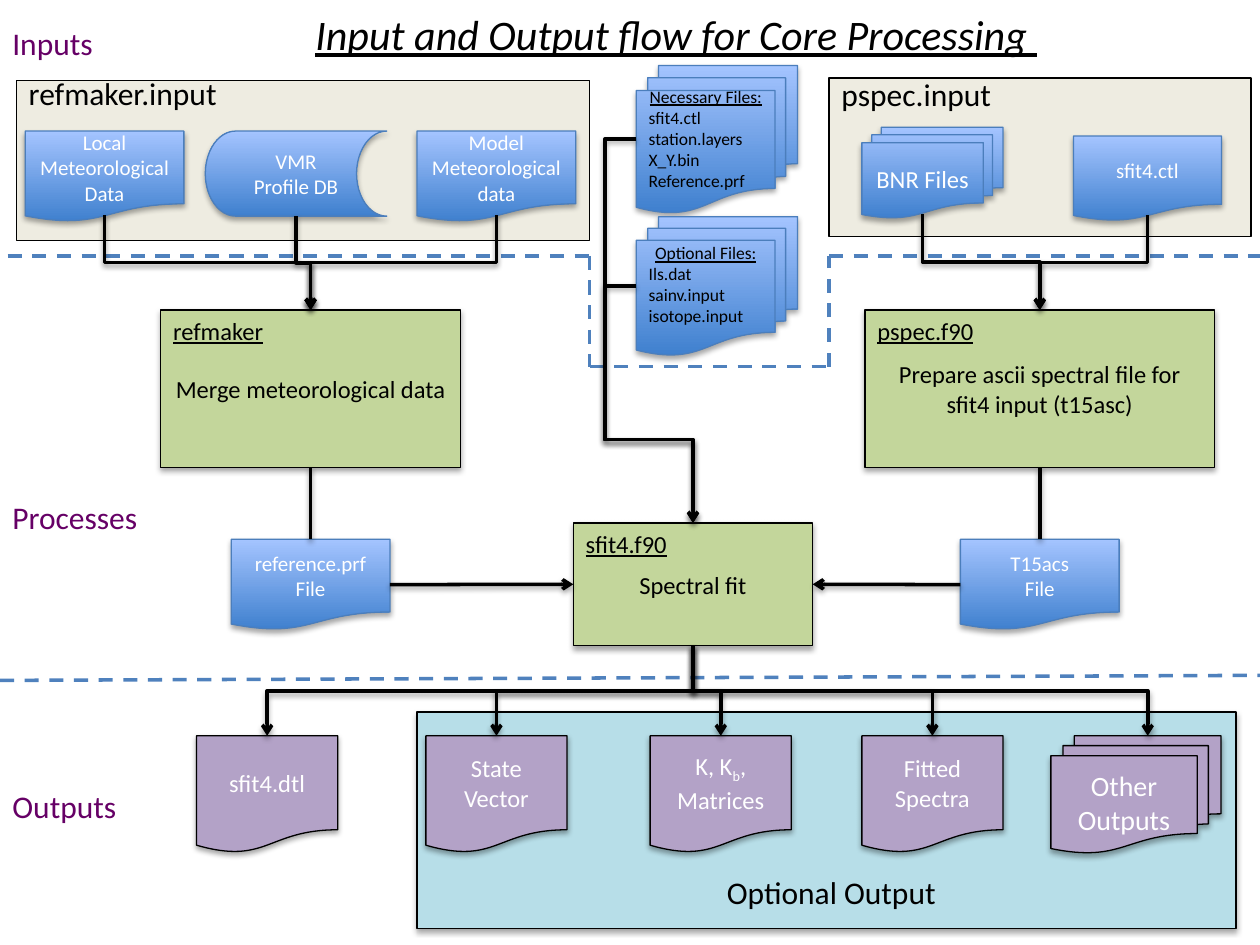
from lxml.etree import SubElement
from pptx import Presentation
from pptx.dml.color import RGBColor
from pptx.enum.dml import MSO_LINE
from pptx.enum.shapes import MSO_CONNECTOR, MSO_SHAPE
from pptx.enum.text import MSO_ANCHOR, PP_ALIGN
from pptx.oxml.ns import qn
from pptx.util import Inches, Pt

BLACK = RGBColor(0x00, 0x00, 0x00)
WHITE = RGBColor(0xFF, 0xFF, 0xFF)
PURPLE = RGBColor(0x66, 0x00, 0x66)
LILAC = RGBColor(0xB3, 0xA2, 0xC7)
GREEN = RGBColor(0xC3, 0xD6, 0x9B)
CREAM = RGBColor(0xEE, 0xEC, 0xE1)
AQUA = RGBColor(0xB7, 0xDE, 0xE8)
DASH_BLUE = RGBColor(0x4F, 0x81, 0xBD)
EDGE_BLUE = RGBColor(0x4B, 0x7E, 0xBC)
GRADIENT = RGBColor(0x3F, 0x80, 0xCE), RGBColor(0xA4, 0xC4, 0xFF)

COLS, ROWS = 100, 75
UNIT = Inches(10) / COLS
DOC, MULTI = MSO_SHAPE.FLOWCHART_DOCUMENT, MSO_SHAPE.FLOWCHART_MULTIDOCUMENT
STORAGE, PROCESS = MSO_SHAPE.FLOWCHART_STORED_DATA, MSO_SHAPE.FLOWCHART_PROCESS


def grid(*cells):
    return [round(cell * UNIT) for cell in cells]


def inside(box, dx, dy, w, h):
    return box[0] + dx, box[1] + dy, w, h


def at(box, fx, fy):
    x, y, w, h = box
    return x + fx * w, y + fy * h


def add_run(p, text, size, color, underline=False, italic=False, baseline=0):
    r = p.add_run()
    r.text = text
    r.font.name, r.font.size, r.font.color.rgb = "Calibri", Pt(size), color
    r.font.underline, r.font.italic = underline, italic
    if baseline:
        r.font._element.set("baseline", str(baseline))


def next_paragraph(tf, i):
    return tf.add_paragraph() if i else tf.paragraphs[0]


def add_label(s, box, text, size=18, color=BLACK, underline=False):
    tf = s.shapes.add_textbox(*grid(*box)).text_frame
    tf.word_wrap = True
    add_run(tf.paragraphs[0], text, size, color, underline)


def add_shadow(sp, alpha, dist):
    props = sp._element.spPr
    effects = props.find(qn("a:effectLst"))
    if effects is None:
        effects = SubElement(props, qn("a:effectLst"))
    shadow = SubElement(effects, qn("a:outerShdw"), blurRad="40000", dist=str(dist),
                        dir="5400000", rotWithShape="0")
    color = SubElement(shadow, qn("a:srgbClr"), val="000000")
    SubElement(color, qn("a:alpha"), val=str(alpha * 1000))


def add_block(s, kind, box, fill, lines=(), size=12, color=WHITE, edge=0.75, shadow=True):
    sp = s.shapes.add_shape(kind, *grid(*box))
    sp.shadow.inherit = False
    if fill is GRADIENT:
        sp.fill.gradient()
        sp.fill.gradient_angle = 90
        for i, stop in enumerate(sp.fill.gradient_stops):
            stop.color.rgb, stop.position = GRADIENT[i], i
    else:
        sp.fill.solid()
        sp.fill.fore_color.rgb = fill
    sp.line.color.rgb = EDGE_BLUE if fill is GRADIENT else BLACK
    sp.line.width = Pt(edge)
    if shadow:
        add_shadow(sp, 35, 23000)
    tf = sp.text_frame
    tf.word_wrap, tf.vertical_anchor = True, MSO_ANCHOR.MIDDLE
    for i, line in enumerate(lines):
        p = next_paragraph(tf, i)
        p.alignment = PP_ALIGN.CENTER
        for text, baseline in [(line, 0)] if isinstance(line, str) else line:
            add_run(p, text, size, color, baseline=baseline)
    return sp


def add_line(s, start, end, kind=MSO_CONNECTOR.STRAIGHT, color=BLACK):
    cxn = s.shapes.add_connector(kind, *grid(*start, *end))
    cxn.line.color.rgb, cxn.line.width = color, Pt(2)
    return cxn


def add_divider(s, *points):
    for start, end in zip(points, points[1:]):
        cxn = add_line(s, start, end, color=DASH_BLUE)
        cxn.line.dash_style = MSO_LINE.DASH
        SubElement(cxn._element.spPr, qn("a:effectLst"))


def finish_flow(cxn, arrow=True):
    if arrow:
        SubElement(cxn.line._get_or_add_ln(), qn("a:tailEnd"), type="arrow")
    add_shadow(cxn, 38, 20000)


def flow_straight(s, start, end, arrow=True):
    finish_flow(add_line(s, start, end), arrow)


def flow_down(s, start, end):
    (x1, y1), (x2, y2) = start, end
    cx, cy = (x1 + x2) / 2, (y1 + y2) / 2
    half_w, half_h = (y2 - y1) / 2, abs(x2 - x1) / 2
    side = 1 if x2 > x1 else -1
    cxn = add_line(s, (cx + side * half_w, cy - half_h), (cx - side * half_w, cy + half_h),
                   MSO_CONNECTOR.ELBOW)
    cxn._element.spPr.xfrm.set("rot", "16200000" if side > 0 else "5400000")
    finish_flow(cxn)


def flow_around(s, start, end, trunk_x, bend_y):
    cxn = add_line(s, start, end, MSO_CONNECTOR.ELBOW)
    geom = cxn._element.spPr.find(qn("a:prstGeom"))
    geom.set("prst", "bentConnector4")
    shares = ((trunk_x - start[0]) / (end[0] - start[0]),
              (bend_y - start[1]) / (end[1] - start[1]))
    for i, share in enumerate(shares, 1):
        SubElement(geom.find(qn("a:avLst")), qn("a:gd"), name=f"adj{i}",
                   fmla=f"val {round(share * 100000)}")
    finish_flow(cxn)


def add_title(s, box):
    title = s.shapes.title
    title.left, title.top, title.width, title.height = grid(*box)
    p = title.text_frame.paragraphs[0]
    p.alignment = PP_ALIGN.CENTER
    add_run(p, "Input and Output flow for Core Processing ", 24, BLACK, True, True)


def add_process(s, box, name, task, name_width):
    add_block(s, PROCESS, box, GREEN, [task], 14, BLACK)
    add_label(s, inside(box, 0, 0, name_width, 2.7), name, 14, underline=True)
    return box


def add_refmaker_input(s, box):
    add_block(s, MSO_SHAPE.RECTANGLE, box, CREAM, edge=0, shadow=False)
    add_label(s, inside(box, 0, -1, 19.3, 4), "refmaker.input")
    feet = []
    for kind, dx, w, h, foot, text in (
            (DOC, 0.7, 12.6, 7.2, 0.93, "Local Meteorological Data"),
            (STORAGE, 15, 14.4, 6.75, 1, "VMR Profile DB"),
            (DOC, 31.8, 12.6, 7.2, 0.93, "Model Meteorological data")):
        source = inside(box, dx, 4, w, h)
        add_block(s, kind, source, GRADIENT, [text])
        feet.append(at(source, 0.5, foot))
    return feet


def add_pspec_input(s, box):
    add_block(s, MSO_SHAPE.RECTANGLE, box, CREAM, edge=0, shadow=False)
    add_label(s, inside(box, 0, -0.7, 17.8, 4), "pspec.input")
    bnr, ctl = inside(box, 2.6, 3.9, 11.2, 7.2), inside(box, 19.4, 4.6, 11.75, 6.75)
    add_block(s, MULTI, bnr, GRADIENT, ["BNR Files"], 14)
    add_block(s, DOC, ctl, GRADIENT, ["sfit4.ctl"])
    return at(bnr, 0.43, 0.96), at(ctl, 0.5, 0.93)


def add_file_stack(s, box, heading, names):
    tf = add_block(s, MULTI, box, GRADIENT).text_frame
    tf.margin_bottom = Inches(0.22)
    for i, text in enumerate([heading, *names]):
        p = next_paragraph(tf, i)
        p.alignment = PP_ALIGN.LEFT if i else PP_ALIGN.CENTER
        add_run(p, text, 10, BLACK, underline=i == 0)
    return at(box, 0, 0.5)


def add_outputs(s, box):
    add_block(s, MSO_SHAPE.RECTANGLE, box, AQUA)
    heads = []
    matrices = [("K, K", 0), ("b", -25000), (", Matrices", 0)]
    for kind, dx, w, size, head, line in (
            (DOC, -17.5, 11.2, 14, 0.5, "sfit4.dtl"),
            (DOC, 0.7, 11.2, 14, 0.5, "State Vector"),
            (DOC, 18.5, 11.2, 14, 0.5, matrices),
            (DOC, 35.3, 11.2, 14, 0.5, "Fitted Spectra"),
            (MULTI, 50.3, 13.5, 16, 0.57, "Other Outputs")):
        output = inside(box, dx, 1.9, w, 9.3)
        add_block(s, kind, output, LILAC, [line], size)
        heads.append(at(output, head, 0))
    add_label(s, inside(box, 23.6, 12.3, 19.3, 4), "Optional Output")
    return heads


def main():
    prs = Presentation()
    prs.slide_width, prs.slide_height = grid(COLS, ROWS)
    s = prs.slides.add_slide(prs.slide_layouts[5])
    add_title(s, (21.7, 0.2, 63.9, 5))
    for text, y, w in (("Inputs", 1.4, 8.7), ("Processes", 39, 12.7), ("Outputs", 62, 10.5)):
        add_label(s, (0, y, w, 4), text, color=PURPLE)
    add_divider(s, (0.6, 20.3), (46.8, 20.3), (46.8, 29.1), (65.8, 29.1), (65.8, 20.3), (COLS, 20.3))
    add_divider(s, (0, 54), (COLS, 53.6))

    met_feet = add_refmaker_input(s, (1.3, 6.4, 45.5, 12.7))
    spectra_feet = add_pspec_input(s, (65.8, 6.2, 33.5, 12.6))
    heads = add_outputs(s, (33.1, 56.5, 65, 17.2))
    refmaker = add_process(s, (12.75, 24.6, 23.8, 12.5), "refmaker", "Merge meteorological data", 9.4)
    pspec = add_process(s, (68.65, 24.6, 27.75, 12.5), "pspec.f90",
                        "Prepare ascii spectral file for sfit4 input (t15asc)", 11.4)
    fit = add_process(s, (45.5, 41.5, 19, 9.75), "sfit4.f90", "Spectral fit", 8.7)

    for feet, process in ((met_feet, refmaker), (spectra_feet, pspec)):
        for foot in feet:
            flow_down(s, foot, at(process, 0.5, 0))
    for process, name, near, far in ((refmaker, "reference.prf", 1, 0), (pspec, "T15acs", 0, 1)):
        x, y = at(process, 0.5, 1)
        result = (x - 6.3, y + 5.7, 12.6, 7.2)
        add_block(s, DOC, result, GRADIENT, [name, "File"])
        flow_straight(s, (x, y), at(result, 0.5, 0), arrow=False)
        flow_straight(s, at(result, near, 0.5), at(fit, far, 0.5))
    for head in heads:
        flow_down(s, at(fit, 0.5, 1), head)
    for box, heading, names in (
            ((50.5, 5.2, 12.8, 11.7), "Necessary Files:",
             ["sfit4.ctl", "station.layers", "X_Y.bin", "Reference.prf"]),
            ((50.5, 17.2, 12.8, 11), "Optional Files:", ["Ils.dat", "sainv.input", "isotope.input"])):
        flow_around(s, add_file_stack(s, box, heading, names), at(fit, 0.5, 0), 48, 34.9)
    prs.save("out.pptx")


if __name__ == "__main__":
    main()
